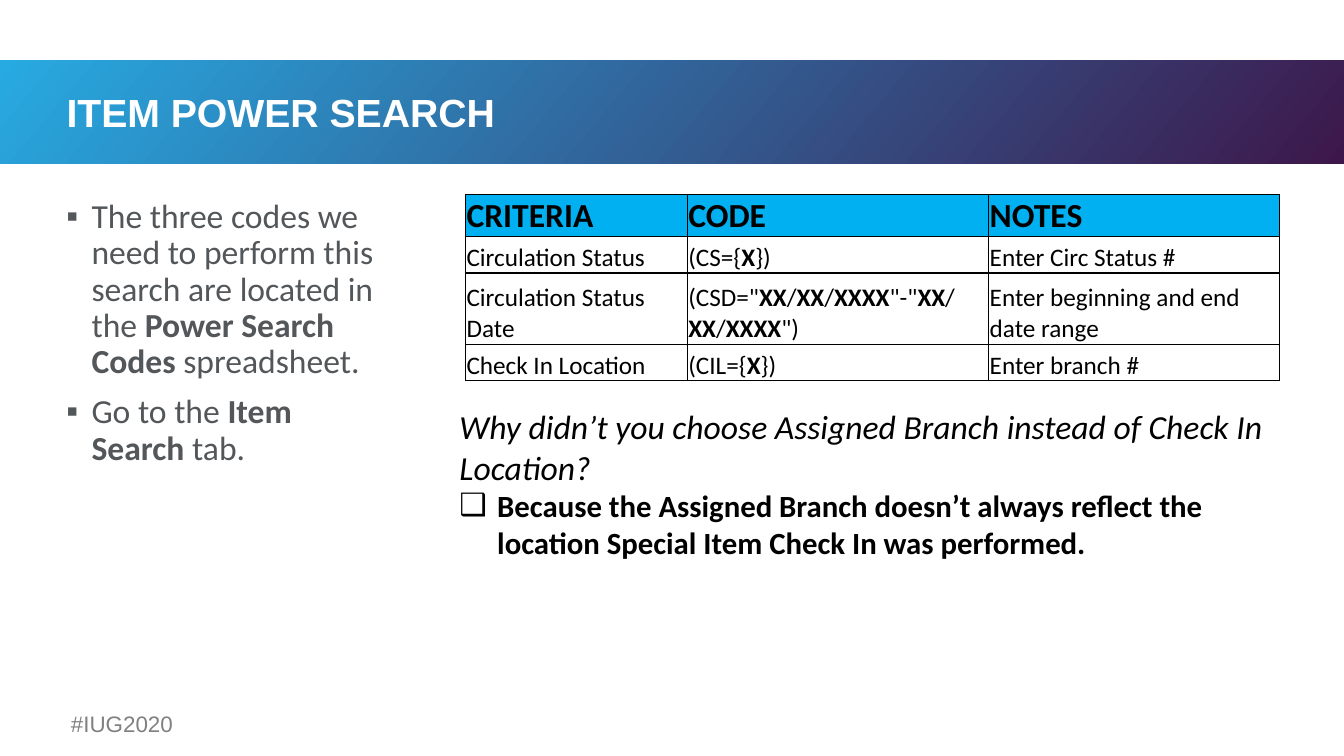
from lxml.etree import SubElement
from pptx import Presentation
from pptx.dml.color import RGBColor
from pptx.enum.shapes import MSO_SHAPE
from pptx.enum.text import MSO_ANCHOR, MSO_AUTO_SIZE, PP_ALIGN
from pptx.oxml.ns import qn
from pptx.util import Pt

WHITE = RGBColor(0xFF, 0xFF, 0xFF)
BLACK = RGBColor(0, 0, 0)
GREY = RGBColor(0x80, 0x80, 0x80)
SLATE = RGBColor(0x53, 0x57, 0x5A)
SKY = RGBColor(0x27, 0xAA, 0xE1)
PLUM = RGBColor(0x3D, 0x17, 0x4B)
HEADER_BLUE = RGBColor(0x00, 0xB0, 0xF0)

STEPS = [
    "The three codes we need to perform this search are located in the "
    "*Power Search Codes *spreadsheet.",
    "Go to the *Item Search* tab.",
]
COLUMN_WIDTHS = [158.4, 215.3, 207.4]
ROW_HEIGHTS = [30, 26, 51, 26]
CODES = [
    ["*CRITERIA*", "*CODE*", "*NOTES*"],
    ["Circulation Status", "(CS={*X*})", "Enter Circ Status #"],
    ["Circulation Status Date",
     '(CSD="*XX*/*XX*/*XXXX*"-"*XX*/*XX*/*XXXX*")',
     "Enter beginning and end date range"],
    ["Check In Location", "(CIL={*X*})", "Enter branch #"],
]
QUESTION = "Why didn’t you choose Assigned Branch instead of Check In Location?"
ANSWER = ("*Because the Assigned Branch doesn’t always reflect the location "
          "Special Item Check In was performed.*")


def write(paragraph, marked, size, color, face="Calibri", italic=False):
    for index, part in enumerate(marked.split("*")):
        if part:
            run = paragraph.add_run()
            run.text = part
            font = run.font
            font.name, font.size, font.color.rgb = face, Pt(size), color
            font.bold, font.italic = index % 2 == 1, italic


def add_bullet(paragraph, char, indent):
    properties = paragraph._p.get_or_add_pPr()
    properties.set("marL", str(Pt(indent)))
    properties.set("indent", str(-Pt(indent)))
    SubElement(properties, qn("a:buFont"), typeface="Arial")
    SubElement(properties, qn("a:buChar"), char=char)


def add_text(slide, left, top, width, height):
    box = slide.shapes.add_textbox(Pt(left), Pt(top), Pt(width), Pt(height))
    box.text_frame.word_wrap = True
    return box.text_frame


def add_title(slide, text):
    title = slide.shapes.title
    title.left, title.top, title.width, title.height = Pt(40.3), Pt(53.3), Pt(872.6), Pt(57.6)
    frame = title.text_frame
    frame.auto_size = MSO_AUTO_SIZE.NONE
    frame.vertical_anchor = MSO_ANCHOR.MIDDLE
    heading = frame.paragraphs[0]
    heading.alignment = PP_ALIGN.LEFT
    heading.line_spacing = 0.9
    write(heading, text, 28, WHITE, "Arial")


def add_band(slide, width):
    band = slide.shapes.add_shape(MSO_SHAPE.RECTANGLE, 0, Pt(43), width, Pt(73.8))
    band.shadow.inherit = False
    band.line.fill.background()
    band.fill.gradient()
    band.fill.gradient_angle = 320
    for stop, color in zip(band.fill.gradient_stops, (SKY, PLUM)):
        stop.color.rgb = color
    slide.shapes.title.element.addprevious(band.element)


def add_steps(slide):
    frame = add_text(slide, 40.3, 139, 238.3, 347.8)
    for index, step in enumerate(STEPS):
        paragraph = frame.add_paragraph() if index else frame.paragraphs[0]
        paragraph.line_spacing = 0.9
        paragraph.space_before = Pt(10 if index else 0)
        add_bullet(paragraph, "▪", 18)
        write(paragraph, step, 24, SLATE)


def add_borders(cell):
    properties = cell._tc.get_or_add_tcPr()
    for side in ("lnL", "lnR", "lnT", "lnB"):
        line = SubElement(properties, qn(f"a:{side}"), w=str(Pt(1)))
        solid = SubElement(line, qn("a:solidFill"))
        SubElement(solid, qn("a:srgbClr"), val=str(BLACK))


def add_codes(slide):
    table = slide.shapes.add_table(
        len(CODES), len(COLUMN_WIDTHS), Pt(332.6), Pt(139),
        Pt(sum(COLUMN_WIDTHS)), Pt(sum(ROW_HEIGHTS))).table
    table.first_row = table.horz_banding = False
    for column, width in zip(table.columns, COLUMN_WIDTHS):
        column.width = Pt(width)
    for index, (row, height) in enumerate(zip(table.rows, ROW_HEIGHTS)):
        row.height = Pt(height)
        for cell, text in zip(row.cells, CODES[index]):
            cell.margin_left = cell.margin_right = cell.margin_top = Pt(0.7)
            cell.margin_bottom = 0
            cell.vertical_anchor = MSO_ANCHOR.BOTTOM
            add_borders(cell)
            if index:
                cell.fill.background()
            else:
                cell.fill.solid()
                cell.fill.fore_color.rgb = HEADER_BLUE
            write(cell.text_frame.paragraphs[0], text, 18 if index else 24, BLACK)


def add_question(slide):
    frame = add_text(slide, 321.1, 286.6, 592.6, 118.8)
    write(frame.paragraphs[0], QUESTION, 24, BLACK, italic=True)
    answer = frame.add_paragraph()
    add_bullet(answer, "❑", 27)
    write(answer, ANSWER, 22, BLACK)


def add_hashtag(slide):
    hashtag = add_text(slide, 0, 504, 174.2, 26.6).paragraphs[0]
    hashtag.alignment = PP_ALIGN.CENTER
    write(hashtag, "#IUG2020", 16, GREY, "Arial")


def main():
    deck = Presentation()
    deck.slide_width, deck.slide_height = Pt(960), Pt(540)
    slide = deck.slides.add_slide(deck.slide_layouts[5])
    add_title(slide, "*ITEM POWER SEARCH*")
    add_band(slide, deck.slide_width)
    add_steps(slide)
    add_codes(slide)
    add_question(slide)
    add_hashtag(slide)
    deck.save("out.pptx")


if __name__ == "__main__":
    main()
